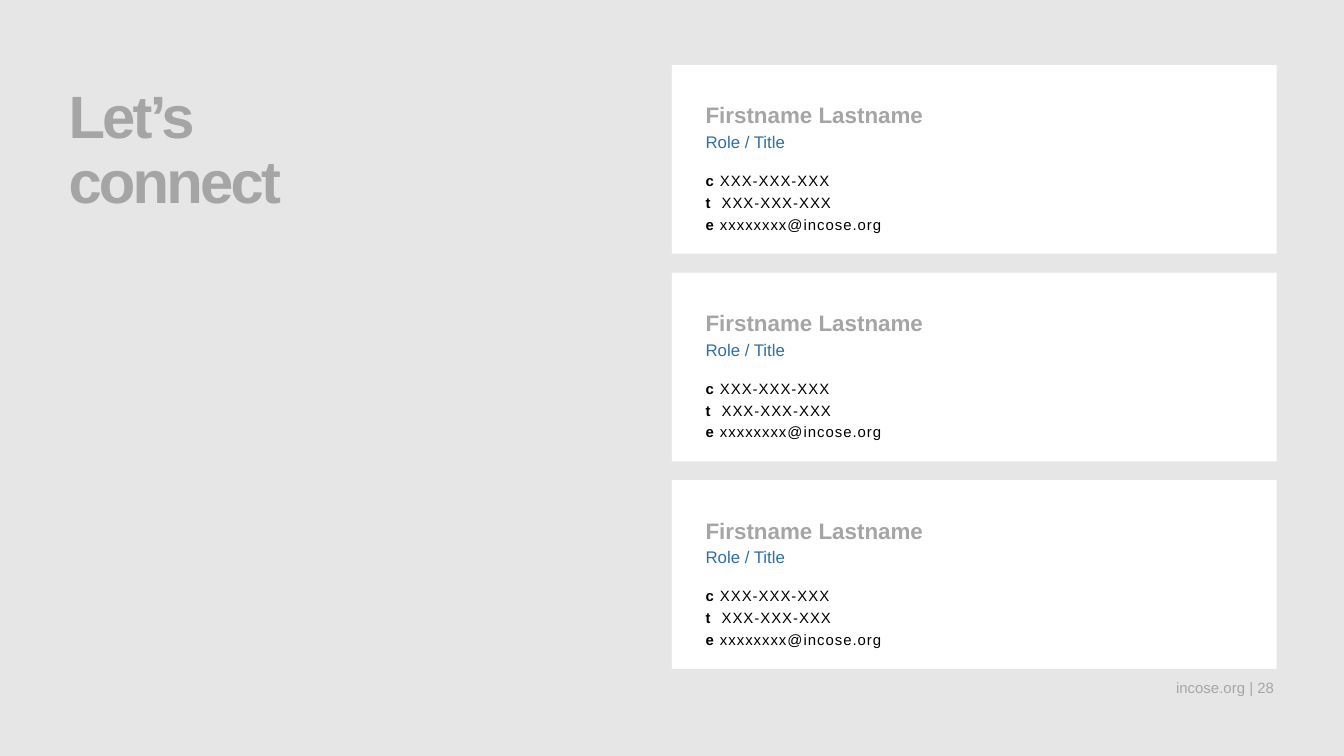
from pptx import Presentation
from pptx.dml.color import RGBColor
from pptx.enum.shapes import MSO_SHAPE as Shape
from pptx.enum.text import MSO_ANCHOR as Anchor, PP_ALIGN as Align
from pptx.util import Pt

COLORS = {
    "background": "E7E6E6",
    "card": "FFFFFF",
    "grey": "A5A5A5",
    "blue": "2B6FAB",
    "black": "000000",
}

# Card grid, in points
CARD_COUNT = 3
CARD_LEFT, CARD_TOP = 360, 34.8
CARD_WIDTH, CARD_HEIGHT = 324, 101.1
CARD_PITCH = 111.2
CONTACT_HEIGHT = 40.3

CONTACTS = [("c", " XXX-XXX-XXX"), ("t", "  XXX-XXX-XXX"), ("e ", "xxxxxxxx@incose.org")]


def color(name):
    return RGBColor.from_string(COLORS[name])


def set_frame(shape, insets=(0, 0, 0, 0), anchor=Anchor.TOP):
    left, top, right, bottom = map(Pt, insets)
    values = {
        "margin_left": left, "margin_top": top,
        "margin_right": right, "margin_bottom": bottom,
        "vertical_anchor": anchor, "word_wrap": True,
    }
    for name, value in values.items():
        setattr(shape.text_frame, name, value)
    return shape.text_frame


def add_paragraph(frame, first=False, **values):
    paragraph = frame.paragraphs[0] if first else frame.add_paragraph()
    for name, value in {"alignment": Align.LEFT, **values}.items():
        setattr(paragraph, name, value)
    return paragraph


def add_run(paragraph, text, size, color_name, bold=False, spacing=0):
    run = paragraph.add_run()
    run.text = text
    for name, value in {"name": "Arial", "size": Pt(size), "bold": bold}.items():
        setattr(run.font, name, value)
    run.font.color.rgb = color(color_name)
    if spacing:
        run.font._element.set("spc", str(round(spacing * 100)))


def add_panel(slide, top, height, fill=None):
    shape = slide.shapes.add_shape(
        Shape.ROUND_1_RECTANGLE, Pt(CARD_LEFT), Pt(top), Pt(CARD_WIDTH), Pt(height))
    shape.adjustments[0] = 0
    shape.shadow.inherit = False
    shape.line.fill.background()
    if fill:
        shape.fill.solid()
        shape.fill.fore_color.rgb = color(fill)
    else:
        shape.fill.background()
    return shape


def add_card(slide, top):
    # Name and role
    frame = set_frame(add_panel(slide, top, CARD_HEIGHT, "card"), (18, 18, 10.8, 21.6))
    name = add_paragraph(frame, first=True, line_spacing=Pt(16))
    add_run(name, "Firstname Lastname", 12, "grey", bold=True)
    role = add_paragraph(frame, line_spacing=0.9, space_before=Pt(3))
    add_run(role, "Role / Title", 9, "blue")

    # Contact lines along the bottom edge
    panel = add_panel(slide, top + CARD_HEIGHT - CONTACT_HEIGHT, CONTACT_HEIGHT)
    frame = set_frame(panel, (18, 0, 10.8, 10.8), Anchor.BOTTOM)
    for index, (label, value) in enumerate(CONTACTS):
        paragraph = add_paragraph(frame, first=index == 0, line_spacing=0.9,
                                  space_before=Pt(3 if index else 0))
        add_run(paragraph, label, 8, "black", bold=True, spacing=0.5)
        add_run(paragraph, value, 8, "black", spacing=0.5)


def add_title(slide):
    box = slide.shapes.add_textbox(Pt(36.7), Pt(46.8), Pt(257.8), Pt(74.9))
    paragraph = add_paragraph(set_frame(box), first=True, line_spacing=0.9)
    for index, line in enumerate(["Let’s", "connect"]):
        if index:
            paragraph.add_line_break()
        add_run(paragraph, line, 32, "grey", bold=True, spacing=-1.5)


def add_footer(slide):
    box = slide.shapes.add_textbox(Pt(603.4), Pt(359.3), Pt(81.4), Pt(13.7))
    frame = set_frame(box, (0, 0, 2.2, 0), Anchor.BOTTOM)
    paragraph = add_paragraph(frame, first=True, alignment=Align.RIGHT, line_spacing=1.5)
    add_run(paragraph, "incose.org | 28", 8, "grey")


def main():
    presentation = Presentation()
    presentation.slide_width, presentation.slide_height = Pt(720), Pt(405)
    slide = presentation.slides.add_slide(presentation.slide_layouts[6])
    slide.background.fill.solid()
    slide.background.fill.fore_color.rgb = color("background")

    add_footer(slide)
    add_title(slide)
    for index in range(CARD_COUNT):
        add_card(slide, CARD_TOP + index * CARD_PITCH)

    presentation.save("out.pptx")


if __name__ == "__main__":
    main()
